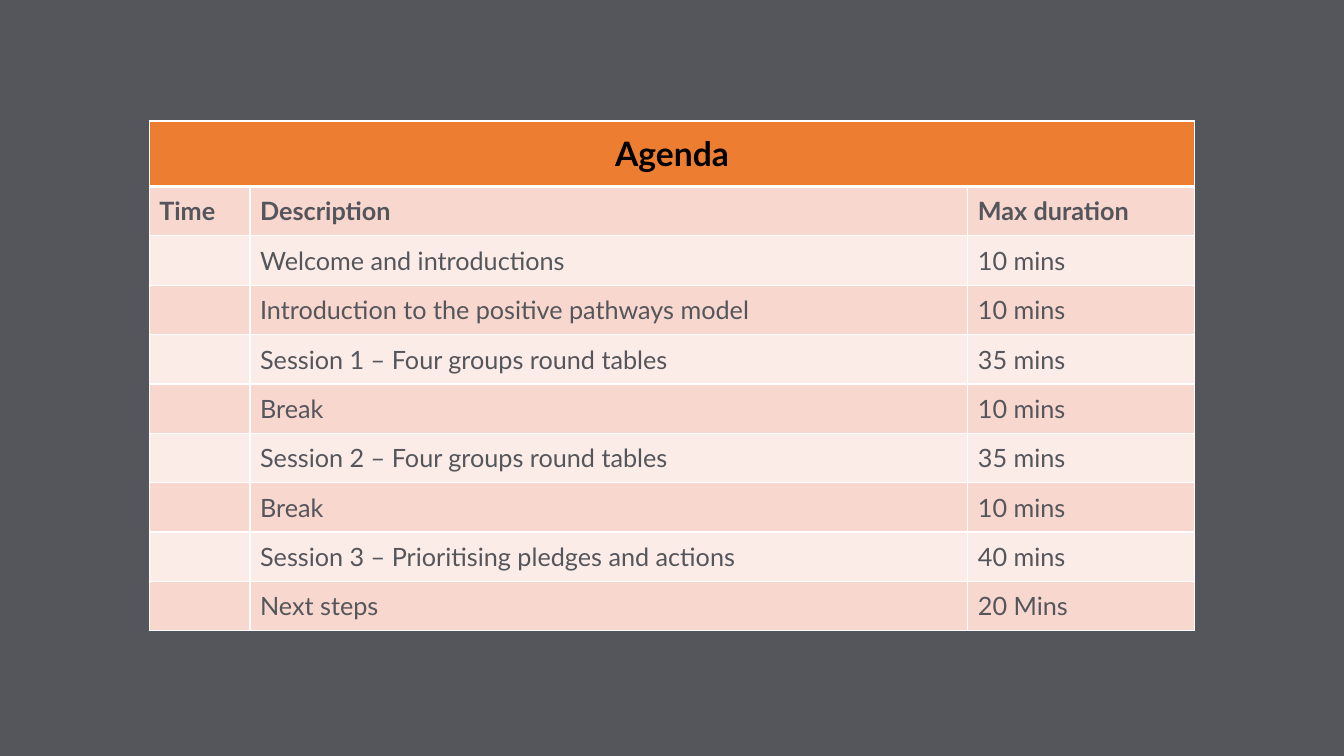
from lxml import etree
from pptx import Presentation, util as u
from pptx.dml.color import RGBColor
from pptx.enum import text
from pptx.oxml import ns

SLATE = RGBColor(0x54, 0x56, 0x5B)
ORANGE = RGBColor(0xED, 0x7D, 0x31)
PEACH = RGBColor(0xF8, 0xD7, 0xCE)
BLUSH = RGBColor(0xFC, 0xEC, 0xE8)
WHITE = RGBColor(0xFF, 0xFF, 0xFF)
BLACK = RGBColor(0, 0, 0)
FONT = "Lato"

WIDTH, HEIGHT = 13.33, 7.5
COLS = (1, 7.12, 2.25)
HEAD, ROW = 0.65, 0.49
TITLE = "Agenda"
LABELS = ("Time", "Description", "Max duration")
ITEMS = (
    ("Welcome and introductions", "10 mins"),
    ("Introduction to the positive pathways model", "10 mins"),
    ("Session 1 – Four groups round tables", "35 mins"),
    ("Break", "10 mins"),
    ("Session 2 – Four groups round tables", "35 mins"),
    ("Break", "10 mins"),
    ("Session 3 – Prioritising pledges and actions", "40 mins"),
    ("Next steps", "20 Mins"),
)


def add_edges(cell, top, bottom):
    """Draw white borders; widths in points. Must come before the fill."""
    props = cell._tc.get_or_add_tcPr()
    for side, width in (("L", 1), ("R", 1), ("T", top), ("B", bottom)):
        line = etree.SubElement(props, ns.qn("a:ln" + side), w=str(u.Pt(width)))
        fill = etree.SubElement(line, ns.qn("a:solidFill"))
        etree.SubElement(fill, ns.qn("a:srgbClr"), val=str(WHITE))


def style_cell(cell, fill, top=1, bottom=1):
    add_edges(cell, top, bottom)
    cell.fill.solid()
    cell.fill.fore_color.rgb = fill
    cell.vertical_anchor = text.MSO_ANCHOR.MIDDLE


def write(cell, words, size=18, color=SLATE, bold=False):
    cell.text_frame.text = words
    for run in cell.text_frame.paragraphs[0].runs:
        run.font.name = FONT
        run.font.size = u.Pt(size)
        run.font.bold = bold
        run.font.color.rgb = color


def add_agenda(slide, left, top, width, height):
    rows = (LABELS,) + tuple(("",) + item for item in ITEMS)
    frame = slide.shapes.add_table(
        len(rows) + 1, len(COLS), u.Inches(left), u.Inches(top),
        u.Inches(width), u.Inches(height))
    table = frame.table
    for col, share in zip(table.columns, COLS):
        col.width = u.Inches(width * share / sum(COLS))
    unit = height / (HEAD + ROW * len(rows))
    for num, row in enumerate(table.rows):
        row.height = u.Inches(unit * (ROW if num else HEAD))

    for cell in table.rows[0].cells:
        style_cell(cell, ORANGE, bottom=3)
    title = table.cell(0, 0)
    title.merge(table.cell(0, len(COLS) - 1))
    write(title, TITLE, 24, BLACK, True)
    title.text_frame.paragraphs[0].alignment = text.PP_ALIGN.CENTER

    for num, row in enumerate(rows, 1):
        for cell, words in zip(table.rows[num].cells, row):
            style_cell(cell, PEACH if num % 2 else BLUSH, top=3 if num == 1 else 1)
            write(cell, words, bold=num == 1)


def main():
    deck = Presentation()
    deck.slide_width, deck.slide_height = u.Inches(WIDTH), u.Inches(HEIGHT)
    slide = deck.slides.add_slide(deck.slide_layouts[6])
    slide.background.fill.solid()
    slide.background.fill.fore_color.rgb = SLATE
    wide = sum(COLS)
    tall = HEAD + ROW * (len(ITEMS) + 1)
    add_agenda(slide, (WIDTH - wide) / 2, HEIGHT * 0.16, wide, tall)
    deck.save("out.pptx")


if __name__ == "__main__":
    main()
